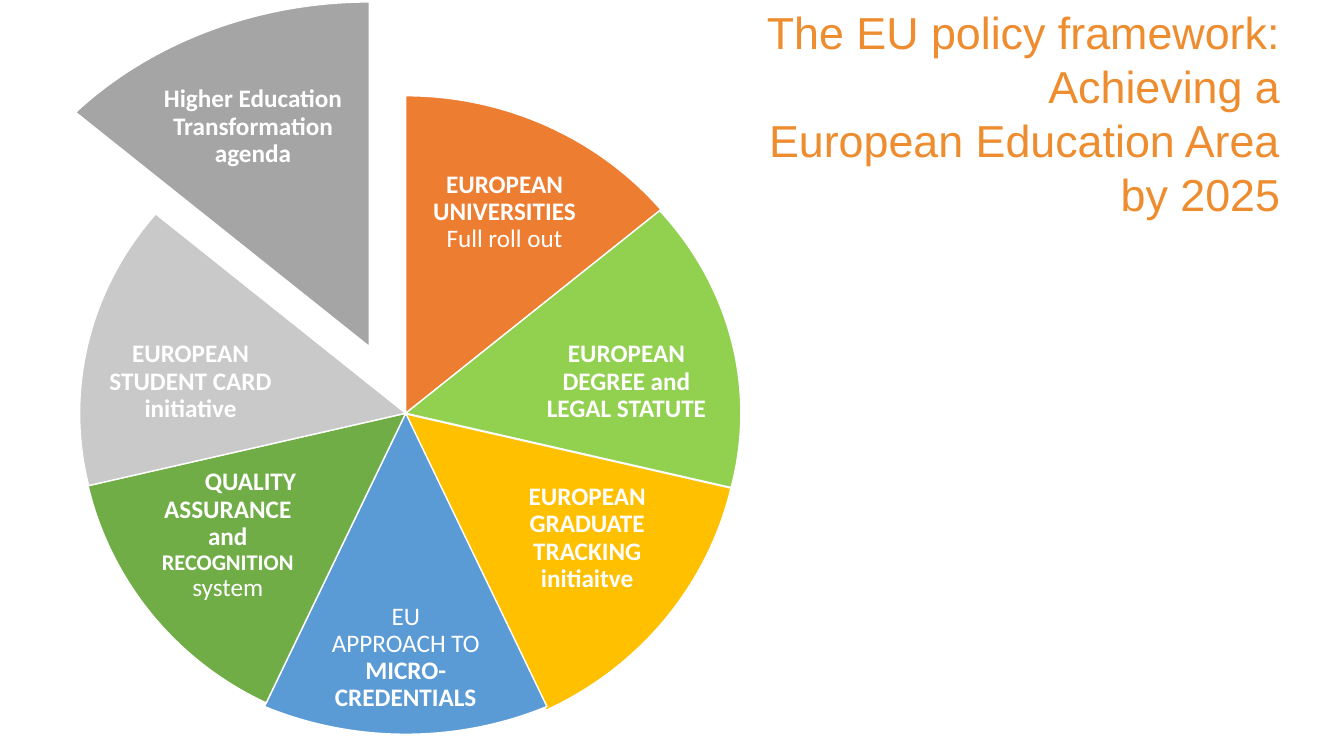
from collections import namedtuple

from pptx import Presentation
from pptx.dml.color import RGBColor
from pptx.enum.shapes import MSO_SHAPE as Preset
from pptx.enum.text import MSO_ANCHOR as Anchor, MSO_AUTO_SIZE as AutoSize, PP_ALIGN as Align
from pptx.util import Inches, Pt

Box = namedtuple("Box", "left top width height")
Wedge = namedtuple("Wedge", "fill shift size label_shift label_size spans")

CELL = Inches(0.1)
COLUMNS, ROWS = 133.33, 75
WHEEL = Box(5.8, 9.1, 68.9, 63.8)
HEADING = Box(73.7, 0, 54.3, 22.6)
COLORS = {
    "orange": "ED7D31", "lime": "92D050", "gold": "FFC000", "blue": "5B9BD5",
    "green": "70AD47", "silver": "C9C9C9", "grey": "A5A5A5",
    "white": "FFFFFF", "heading": "ED8D2F",
}
BOLD = {"name": "Calibri", "size": Pt(18), "bold": True}
PLAIN = BOLD | {"bold": False}
SMALL = BOLD | {"size": Pt(16)}
TITLE = {"name": "Arial", "size": Pt(32)}
LABEL_FRAME = {"word_wrap": True, "vertical_anchor": Anchor.MIDDLE} | {
    f"margin_{side}": Inches(0.03) for side in ("left", "top", "right", "bottom")}
HEADING_FRAME = {"word_wrap": False, "auto_size": AutoSize.SHAPE_TO_FIT_TEXT}
LABEL_PARA = {"alignment": Align.CENTER, "line_spacing": 0.9}
HEADING_PARA = {"alignment": Align.RIGHT}
QUALITY_INDENT = Inches(0.45)

WEDGES = [
    Wedge("orange", (0, 0), (66, 63), (9.8, -19.95), (18.1, 10.9),
          [("EUROPEAN UNIVERSITIES\n", BOLD), ("Full roll out", PLAIN)]),
    Wedge("lime", (0, 0), (66.5, 61.6), (21.9, -3.1), (19.3, 11.4),
          [("EUROPEAN DEGREE and LEGAL STATUTE", BOLD)]),
    Wedge("gold", (-0.3, 0), (66.9, 65.1), (18, 12.4), (17.5, 12.4),
          [("EUROPEAN GRADUATE TRACKING initiaitve", BOLD)]),
    Wedge("blue", (0, 0), (68.9, 63.7), (0, 24.25), (18.5, 12.1),
          [("EU\nAPPROACH TO\n", PLAIN), ("MICRO-CREDENTIALS", BOLD)]),
    Wedge("green", (0, 0), (64.7, 63.6), (-17.65, 12.15), (17, 12.1),
          [("QUALITY\nASSURANCE and ", BOLD), ("RECOGNITION\n", SMALL), ("system", PLAIN)]),
    Wedge("silver", (0, 0), (64.7, 61.6), (-21.35, -3.1), (18.8, 11.4),
          [("EUROPEAN STUDENT CARD initiative", BOLD)]),
    Wedge("grey", (-3.6, -6.6), (79.5, 68.4), (-15.15, -28.4), (21.8, 11.8),
          [("Higher Education Transformation\nagenda", BOLD)]),
]


def color(name):
    """Return the named colour."""
    return RGBColor.from_string(COLORS[name])


def cells(box):
    """Turn a box of grid cells into slide lengths."""
    return [round(length * CELL) for length in box]


def around(box, shift, size):
    """Return a box of the given size, shifted from the centre of another."""
    return Box(box.left + box.width / 2 + shift[0] - size[0] / 2,
               box.top + box.height / 2 + shift[1] - size[1] / 2, *size)


def apply(target, values):
    """Set every attribute from a dict of format values."""
    for name, value in values.items():
        setattr(target, name, value)


def write(para, spans, fill, values):
    """Fill a paragraph with formatted spans, turning newlines into line breaks."""
    apply(para, values)
    for text, font in spans:
        for index, line in enumerate(text.split("\n")):
            if index:
                para.add_line_break()
            if line:
                span = para.add_run()
                span.text = line
                apply(span.font, font)
                span.font.color.rgb = color(fill)


def add_wheel(page, box):
    """Draw equal labelled wedges around the centre of the box."""
    group = page.shapes.add_group_shape().shapes
    step = 360 / len(WEDGES)
    for index, wedge in enumerate(WEDGES):
        pie = group.add_shape(Preset.PIE, *cells(around(box, wedge.shift, wedge.size)))
        for side in range(2):
            angle = (270 + (index + side) * step) % 360
            pie.adjustments[side] = angle * 0.6
        pie.shadow.inherit = False
        pie.fill.solid()
        pie.fill.fore_color.rgb = color(wedge.fill)
        pie.line.color.rgb = color("white")
        pie.line.width = Pt(1)

        label = group.add_textbox(*cells(around(box, wedge.label_shift, wedge.label_size)))
        apply(label.text_frame, LABEL_FRAME)
        para = label.text_frame.paragraphs[0]
        write(para, wedge.spans, "white", LABEL_PARA)
        if wedge.fill == "green":
            para._p.get_or_add_pPr().set("indent", str(QUALITY_INDENT))


def add_heading(page, box):
    """Write the right-aligned heading into the box."""
    frame = page.shapes.add_textbox(*cells(box)).text_frame
    apply(frame, HEADING_FRAME)
    write(frame.paragraphs[0], [("The EU policy framework:", TITLE)], "heading", HEADING_PARA)
    write(frame.add_paragraph(), [("Achieving a\nEuropean Education Area\nby 2025", TITLE)],
          "heading", HEADING_PARA)


def main():
    """Build the deck and save it."""
    deck = Presentation()
    deck.slide_width, deck.slide_height = round(COLUMNS * CELL), ROWS * CELL
    page = deck.slides.add_slide(deck.slide_layouts[6])
    add_wheel(page, WHEEL)
    add_heading(page, HEADING)
    deck.save("out.pptx")


if __name__ == "__main__":
    main()
